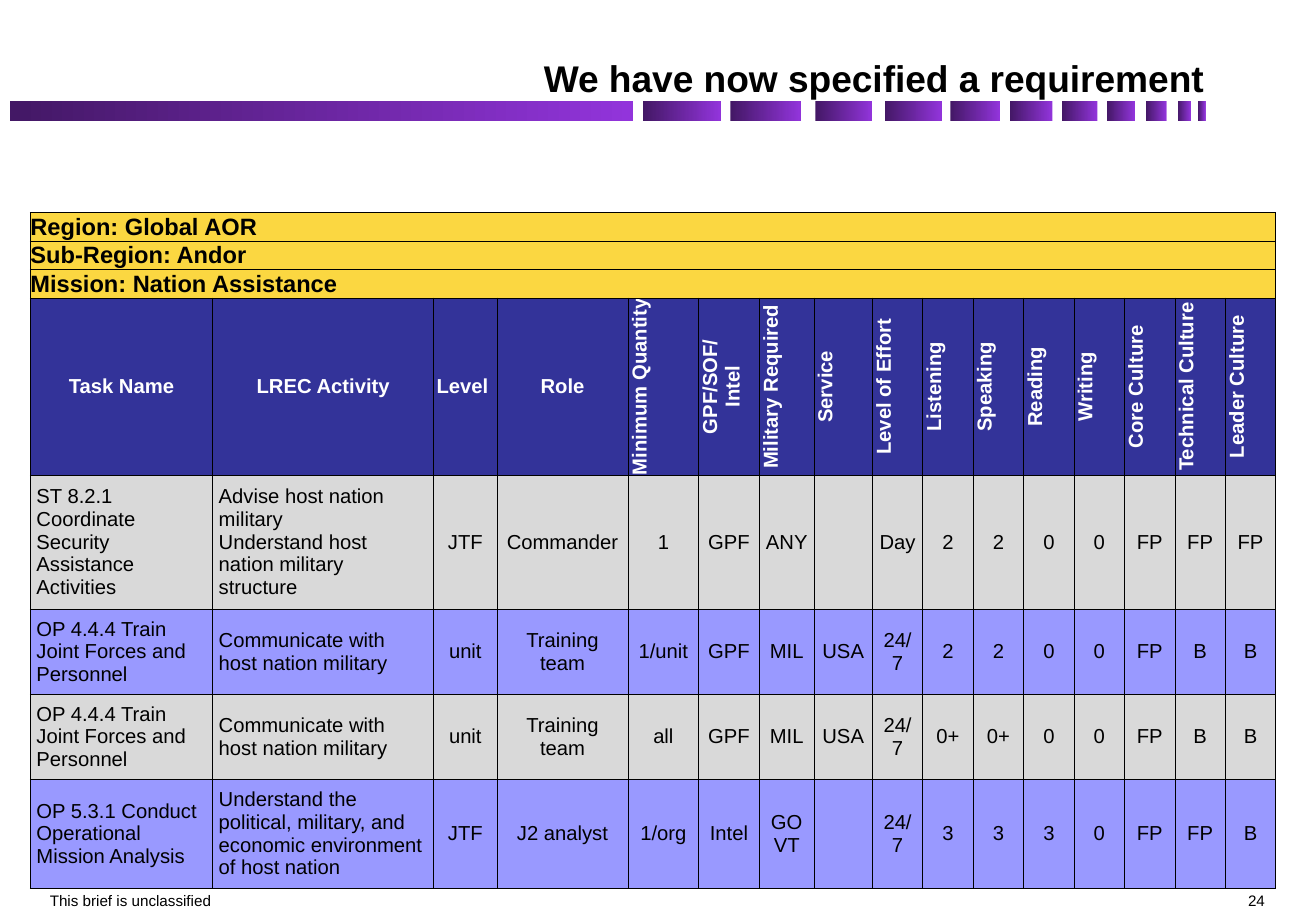
from lxml import etree
from pptx import Presentation
from pptx.dml.color import RGBColor
from pptx.enum.shapes import MSO_SHAPE
from pptx.enum.text import MSO_ANCHOR, PP_ALIGN
from pptx.oxml.ns import qn
from pptx.util import Inches, Pt

RECTANGLE = MSO_SHAPE.RECTANGLE
TOP, MIDDLE, BOTTOM = MSO_ANCHOR.TOP, MSO_ANCHOR.MIDDLE, MSO_ANCHOR.BOTTOM
LEFT, CENTER, RIGHT = PP_ALIGN.LEFT, PP_ALIGN.CENTER, PP_ALIGN.RIGHT

GRID_COLUMNS, GRID_ROWS = 1083, 750
UNIT = Inches(0.01)
FONT = "Arial"
BLACK, WHITE = "000000", "FFFFFF"
GOLD, NAVY, GREY, LILAC = "FBD741", "333399", "D9D9D9", "9999FF"
DARK_PURPLE, PURPLE = "431865", "9234DB"

DASHES = [(0, 513), (521, 64), (593, 58), (663, 47), (720, 47), (774, 41),
          (823, 35), (866, 29), (903, 23), (935, 17), (961, 11), (978, 6)]

SCOPE = ["Region: Global AOR", "Sub-Region: Andor", "Mission: Nation Assistance"]
HEADINGS = ["Task Name", "LREC Activity", "Level ", "Role", "Minimum Quantity",
            "GPF/SOF/\nIntel", "Military Required", "Service", "Level of Effort",
            "Listening", "Speaking", "Reading", "Writing", "Core Culture",
            "Technical Culture", "Leader Culture"]
TASKS = [
    ["ST 8.2.1 Coordinate Security Assistance Activities",
     "Advise host nation military\nUnderstand host nation military structure",
     "JTF", "Commander", "1", "GPF", "ANY", "", "Day",
     "2", "2", "0", "0", "FP", "FP", "FP"],
    ["OP 4.4.4 Train Joint Forces and Personnel",
     "Communicate with host nation military",
     "unit", "Training team", "1/unit", "GPF", "MIL", "USA", "24/7",
     "2", "2", "0", "0", "FP", "B", "B"],
    ["OP 4.4.4 Train Joint Forces and Personnel",
     "Communicate with host nation military",
     "unit", "Training team", "all", "GPF", "MIL", "USA", "24/7",
     "0+", "0+", "0", "0", "FP", "B", "B"],
    ["OP 5.3.1 Conduct Operational Mission Analysis",
     "Understand the political, military, and economic environment of host nation",
     "JTF", "J2 analyst", "1/org", "Intel", "GOVT", "", "24/7",
     "3", "3", "3", "0", "FP", "FP", "B"],
]
DETAIL_WIDTHS = [150, 182, 52, 108, 58, 50, 45, 48]
ROW_HEIGHTS = [23.5, 23.5, 23.5, 146, 104, 66, 66, 85]
DETAIL_COUNT = len(DETAIL_WIDTHS)
TEXT_COLUMNS = 2
FIRST_UPRIGHT = 4


def color(hex_code):
    return RGBColor.from_string(hex_code)


def span(units):
    return int(units * UNIT)


def write(frame, text, size, hex_code=BLACK, bold=False, align=LEFT, spacing=None):
    for index, line in enumerate(text.split("\n")):
        paragraph = frame.add_paragraph() if index else frame.paragraphs[0]
        paragraph.alignment = align
        if spacing:
            paragraph.line_spacing = spacing
        if line:
            run = paragraph.add_run()
            run.text = line
            run.font.name = FONT
            run.font.size = Pt(size)
            run.font.bold = bold
            run.font.color.rgb = color(hex_code)


def add_label(slide, box, text, size, anchor=TOP, wrap=False, **style):
    frame = slide.shapes.add_textbox(*map(span, box)).text_frame
    frame.margin_left = frame.margin_right = frame.margin_top = frame.margin_bottom = 0
    frame.vertical_anchor = anchor
    frame.word_wrap = wrap
    write(frame, text, size, **style)


def add_dashed_rule(slide, box):
    left, top, _, height = box
    for offset, width in DASHES:
        dash = slide.shapes.add_shape(
            RECTANGLE, *map(span, (left + offset, top, width, height)))
        dash.shadow.inherit = False
        dash.line.fill.background()
        dash.fill.gradient()
        dash.fill.gradient_angle = 0
        for stop, shade in zip(dash.fill.gradient_stops, (DARK_PURPLE, PURPLE)):
            stop.color.rgb = color(shade)


def add_borders(cell):
    properties = cell._tc.get_or_add_tcPr()
    for index, side in enumerate(("lnL", "lnR", "lnT", "lnB")):
        border = etree.Element(qn(f"a:{side}"), w=str(Pt(0.5)))
        fill = etree.SubElement(border, qn("a:solidFill"))
        etree.SubElement(fill, qn("a:srgbClr"), val=BLACK)
        properties.insert(index, border)


def fill_cell(cell, text, shade, margin=0, upright=False, **style):
    cell.fill.solid()
    cell.fill.fore_color.rgb = color(shade)
    cell.margin_left = cell.margin_right = span(margin)
    cell.margin_top = cell.margin_bottom = span(margin)
    cell.vertical_anchor = MIDDLE
    if upright:
        cell._tc.get_or_add_tcPr().set("vert", "vert270")
    add_borders(cell)
    write(cell.text_frame, text, **style)


def add_requirements(slide, box):
    table = slide.shapes.add_table(
        len(ROW_HEIGHTS), len(HEADINGS), *map(span, box)).table
    table.first_row = table.horz_banding = False
    rating_count = len(HEADINGS) - DETAIL_COUNT
    rating_width = (box[2] - sum(DETAIL_WIDTHS)) / rating_count
    for column, width in zip(table.columns, DETAIL_WIDTHS + [rating_width] * rating_count):
        column.width = span(width)
    for row, height in zip(table.rows, ROW_HEIGHTS):
        row.height = span(height)

    heading_row = len(SCOPE)
    for row, scope in enumerate(SCOPE):
        for column in range(len(HEADINGS)):
            fill_cell(table.cell(row, column), "" if column else scope, GOLD,
                      size=14, bold=True)
        table.cell(row, 0).merge(table.cell(row, len(HEADINGS) - 1))
    for column, heading in enumerate(HEADINGS):
        fill_cell(table.cell(heading_row, column), heading, NAVY,
                  upright=column >= FIRST_UPRIGHT, size=12, hex_code=WHITE,
                  bold=True, align=CENTER)
    for row, task in enumerate(TASKS):
        for column, value in enumerate(task):
            fill_cell(table.cell(heading_row + 1 + row, column), value,
                      LILAC if row % 2 else GREY, margin=5, size=12,
                      align=LEFT if column < TEXT_COLUMNS else CENTER)


def add_footer(slide, box):
    left, top, width, height = box
    number_width = 15
    add_label(slide, (left, top, 204, height), "This brief is unclassified", 9)
    add_label(slide, (left + width - number_width, top, number_width, height),
              "24", 9, align=RIGHT)


def main():
    deck = Presentation()
    deck.slide_width, deck.slide_height = span(GRID_COLUMNS), span(GRID_ROWS)
    slide = deck.slides.add_slide(deck.slide_layouts[6])
    add_dashed_rule(slide, (8, 83, 984, 17))
    add_label(slide, (133, 0, 858, 83), "We have now specified a requirement", 22,
              anchor=BOTTOM, wrap=True, bold=True, align=RIGHT, spacing=0.9)
    add_requirements(slide, (25, 175, 1025, sum(ROW_HEIGHTS)))
    add_footer(slide, (41, 734, 1000, 15))
    deck.save("out.pptx")


if __name__ == "__main__":
    main()
